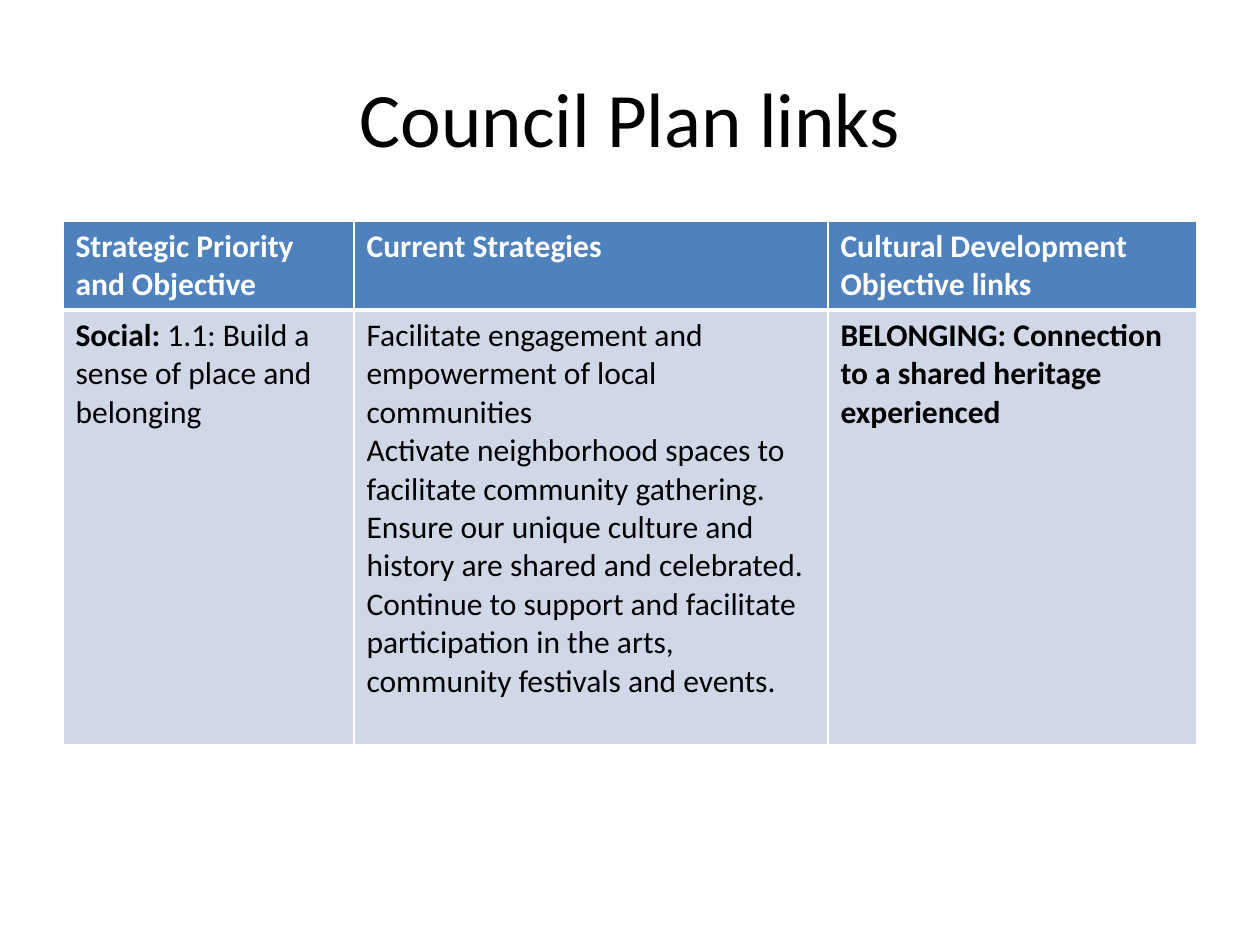
from lxml import etree
from pptx import Presentation
from pptx.dml.color import RGBColor
from pptx.enum.text import MSO_ANCHOR, PP_ALIGN
from pptx.oxml.ns import qn
from pptx.util import Emu, Pt

CENTER, LEFT = PP_ALIGN.CENTER, PP_ALIGN.LEFT
MIDDLE = MSO_ANCHOR.MIDDLE
BLACK = RGBColor(0x00, 0x00, 0x00)
WHITE = RGBColor(0xFF, 0xFF, 0xFF)
HEADER_BLUE = RGBColor(0x4F, 0x81, 0xBD)
BODY_BLUE = RGBColor(0xD0, 0xD8, 0xE8)
FONT = "Calibri"

TITLE = "Council Plan links"
HEADINGS = [
    "Strategic Priority and Objective",
    "Current Strategies",
    "Cultural Development Objective links",
]
PRIORITY = [[("Social: ", True), ("1.1: Build a sense of place and belonging", False)]]
STRATEGIES = [
    [("Facilitate engagement and empowerment of local communities", False)],
    [("Activate neighborhood spaces to facilitate community gathering.", False)],
    [("Ensure our unique culture and history are shared and celebrated.", False)],
    [("Continue to support and facilitate participation in the arts, "
      "community festivals and events.", False)],
]
OBJECTIVE = [[("BELONGING: Connection to a shared heritage experienced", True)]]
ROWS = [
    ([[[(heading, True)]] for heading in HEADINGS], HEADER_BLUE, WHITE),
    ([PRIORITY, STRATEGIES, OBJECTIVE], BODY_BLUE, BLACK),
]

SLIDE_SIZE = (1260, 945)
TITLE_BOX = (63, 38, 1134, 157)
TABLE_CORNER = (63, 221)
COLUMN_WIDTHS = [291, 474, 369]
ROW_HEIGHTS = [89, 435]
THIN, THICK = 1, 3


def px(length):
    """Turn px into EMU."""
    return Emu(round(length * 914400 / 126))


def write(frame, paragraphs, size=18, color=BLACK, align=LEFT):
    """Fill a text frame with paragraphs of (text, bold) runs."""
    frame.word_wrap = True
    for index, runs in enumerate(paragraphs):
        paragraph = frame.paragraphs[0] if index == 0 else frame.add_paragraph()
        paragraph.alignment = align
        for text, bold in runs:
            run = paragraph.add_run()
            run.text = text
            run.font.name = FONT
            run.font.size = Pt(size)
            run.font.bold = bold
            run.font.color.rgb = color


def draw_borders(cell, top, bottom):
    """Give a cell white borders, with the top and bottom widths in points."""
    properties = cell._tc.get_or_add_tcPr()
    widths = {"a:lnL": THIN, "a:lnR": THIN, "a:lnT": top, "a:lnB": bottom}
    for position, (side, width) in enumerate(widths.items()):
        border = etree.Element(qn(side), w=str(Pt(width)))
        fill = etree.SubElement(border, qn("a:solidFill"))
        etree.SubElement(fill, qn("a:srgbClr"), val=str(WHITE))
        properties.insert(position, border)


def main():
    """Build the slide with its title and table."""
    deck = Presentation()
    deck.slide_width, deck.slide_height = map(px, SLIDE_SIZE)
    slide = deck.slides.add_slide(deck.slide_layouts[6])

    title = slide.shapes.add_textbox(*map(px, TITLE_BOX)).text_frame
    title.vertical_anchor = MIDDLE
    write(title, [[(TITLE, False)]], size=44, align=CENTER)

    table_size = (sum(COLUMN_WIDTHS), sum(ROW_HEIGHTS))
    links = slide.shapes.add_table(
        len(ROWS), len(HEADINGS), *map(px, TABLE_CORNER + table_size)
    ).table
    for column, width in zip(links.columns, COLUMN_WIDTHS):
        column.width = px(width)
    for row, height in zip(links.rows, ROW_HEIGHTS):
        row.height = px(height)

    for row_index, (contents, fill, color) in enumerate(ROWS):
        top, bottom = (THIN, THICK) if row_index == 0 else (THICK, THIN)
        for column_index, paragraphs in enumerate(contents):
            cell = links.cell(row_index, column_index)
            cell.fill.solid()
            cell.fill.fore_color.rgb = fill
            draw_borders(cell, top, bottom)
            write(cell.text_frame, paragraphs, color=color)

    deck.save("out.pptx")


if __name__ == "__main__":
    main()
